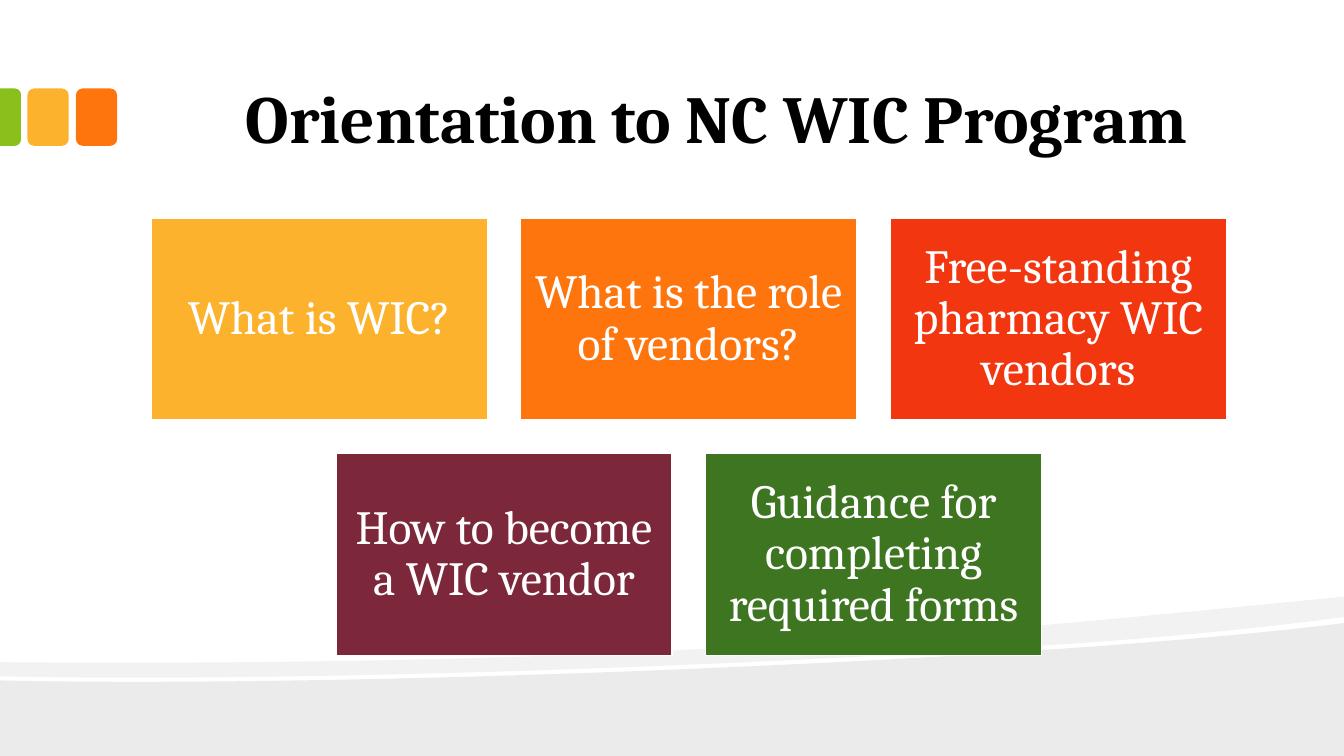
from lxml import etree
from pptx import Presentation
from pptx import util as u
from pptx.dml.color import RGBColor
from pptx.enum import shapes, text
from pptx.oxml import ns

Pt = u.Pt
FONT = "Cambria"
COLORS = {
    "black": "000000", "white": "FFFFFF", "lime": "89C01C", "amber": "FCB22C",
    "orange": "FE750E", "red": "F23610", "wine": "7C283A", "green": "3E7520",
}
TOPIC_ROWS = [
    [("What is WIC?", "amber"),
     ("What is the role of vendors?", "orange"),
     ("Free-standing pharmacy WIC vendors", "red")],
    [("How to become a WIC vendor", "wine"),
     ("Guidance for completing required forms", "green")],
]


def rgb(name):
    return RGBColor.from_string(COLORS[name])


def fill_plain(shape, color):
    shape.shadow.inherit = False
    shape.fill.solid()
    shape.fill.fore_color.rgb = rgb(color)
    shape.line.fill.background()


def write_text(shape, words, size, color, anchor, insets, spacing=1.0, bold=False):
    """Put one centred paragraph in the shape; insets are (sides, top and bottom)."""
    frame = shape.text_frame
    frame.word_wrap = True
    frame.vertical_anchor = anchor
    frame.margin_left = frame.margin_right = Pt(insets[0])
    frame.margin_top = frame.margin_bottom = Pt(insets[1])
    para = frame.paragraphs[0]
    para.text = words
    para.alignment = text.PP_ALIGN.CENTER
    para.line_spacing = spacing
    font = para.runs[0].font
    font.name, font.size, font.bold = FONT, Pt(size), bold
    font.color.rgb = rgb(color)


def add_wave(page, start, segments, opacity):
    """Close an outline of segments: one point is a line, three are a Bezier curve."""
    builder = page.shapes.build_freeform(Pt(start[0]), Pt(start[1]))
    builder.add_line_segments(
        [(Pt(x), Pt(y)) for segment in segments for x, y in segment], close=True)
    wave = builder.convert_to_shape()
    fill_plain(wave, "black")
    color = wave.fill._xPr.find(".//" + ns.qn("a:srgbClr"))
    etree.SubElement(color, ns.qn("a:alpha"), val=str(opacity * 1000))

    lines = iter(wave._element.findall(".//" + ns.qn("a:lnTo")))
    for segment in segments:
        steps = [next(lines) for _ in segment]
        if len(steps) == 3:
            bend = etree.Element(ns.qn("a:cubicBezTo"))
            steps[0].addprevious(bend)
            for step in steps:
                bend.append(step[0])
                step.getparent().remove(step)


def add_waves(page, width, height):
    add_wave(page, (width, 445), [
        [(width, height)],
        [(0, height)],
        [(0, 486)],
        [(253.4, 491.8), (750.2, 471.6), (width, 445)],
    ], 8)
    add_wave(page, (width, 426.2), [
        [(width, 440.6)],
        [(903.6, 448.6), (827.3, 455.8), (740.9, 461.5)],
        [(502.6, 477.4), (185.8, 487.4), (0, 483.1)],
        [(0, 473)],
        [(469.4, 476.6), (699.1, 451.4), (width, 426.2)],
    ], 5)


def add_tabs(page, top, height):
    kinds = shapes.MSO_SHAPE
    for left, color in ((54.2, "orange"), (19.6, "amber")):
        tab = page.shapes.add_shape(kinds.ROUNDED_RECTANGLE, Pt(left), Pt(top),
                                    Pt(29.5), Pt(height))
        fill_plain(tab, color)
    depth = 15
    edge_tab = page.shapes.add_shape(
        kinds.ROUND_2_SAME_RECTANGLE, Pt((depth - height) / 2),
        Pt(top + (height - depth) / 2), Pt(height), Pt(depth))
    edge_tab.rotation = 90
    edge_tab.adjustments[0] = 0.29
    fill_plain(edge_tab, "lime")


def add_title(page, left, top, width, height):
    box = page.shapes.add_textbox(Pt(left), Pt(top), Pt(width), Pt(height))
    write_text(box, "Orientation to NC WIC Program", 48, "black",
               text.MSO_ANCHOR.BOTTOM, (9.5, 5), bold=True)


def add_topics(page, left, top, width, height, gap=24):
    """Fill the box with rows of topic cards, each row centred."""
    card_width = (width - 2 * gap) / 3
    card_height = (height - gap) / 2
    for row, topics in enumerate(TOPIC_ROWS):
        row_width = len(topics) * (card_width + gap) - gap
        row_left = left + (width - row_width) / 2
        for column, (words, color) in enumerate(topics):
            card = page.shapes.add_shape(
                shapes.MSO_SHAPE.RECTANGLE,
                Pt(row_left + column * (card_width + gap)),
                Pt(top + row * (card_height + gap)),
                Pt(card_width), Pt(card_height))
            fill_plain(card, color)
            card.line.color.rgb = rgb("white")
            card.line.width = Pt(0.85)
            write_text(card, words, 34, "white", text.MSO_ANCHOR.MIDDLE,
                       (10, 10), spacing=0.9)


def main():
    deck = Presentation()
    deck.slide_width, deck.slide_height = Pt(960), Pt(540)
    page = deck.slides.add_slide(deck.slide_layouts[6])
    add_waves(page, 960, 540)
    add_tabs(page, 63.2, 41)
    add_title(page, 62, 18, 900, 99)
    add_topics(page, 108, 156, 768, 312)
    deck.save("out.pptx")


if __name__ == "__main__":
    main()
